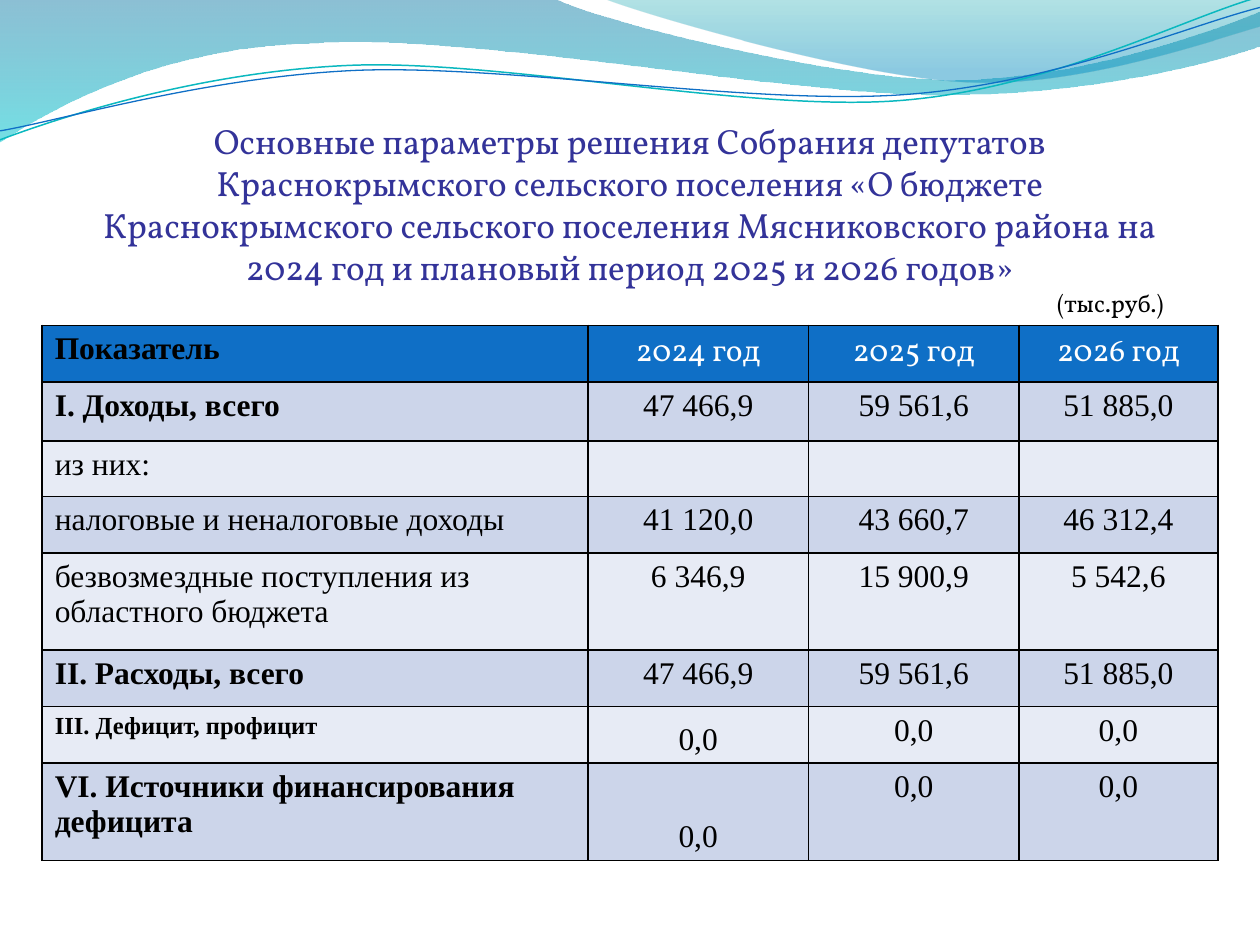
import math

import pptx
import pptx.dml.color
import pptx.enum.text
import pptx.oxml
import pptx.oxml.ns
import pptx.util

Cm, Pt = pptx.util.Cm, pptx.util.Pt
ALIGN = pptx.enum.text.PP_ALIGN
ANCHOR = pptx.enum.text.MSO_ANCHOR
NAMESPACE = pptx.oxml.ns.nsdecls("a")
SERIF, DISPLAY = "Times New Roman", "Vollkorn"
BLACK, WHITE, NAVY, BLUE = "000000", "FFFFFF", "333399", "0F6FC6"
BANDS = ("E7EBF5", "CCD5EA")
LINE_TILT = -2.7

# Outlines in cm: one point is a straight step, three are a Bezier step
WIDE_WAVE = [
    [(0, 0)], [(11.18, -0.03)], [(12.09, 0.43), (16.87, 1.6), (19.25, 1.6)],
    [(21.67, 1.6), (24.33, 0.66), (25.4, 0.23)], [(25.43, 0.91)],
    [(24.97, 1.12), (22.1, 1.93), (18.95, 1.91)],
    [(15.8, 1.91), (9.7, 0.71), (6.53, 0.86)],
    [(3.28, 0.91), (1.17, 2.11), (-0.03, 2.87)], [(0, 0)]]
RIGHT_WAVE = [
    [(12.17, -0.03)], [(12.93, 0.28), (17.32, 1.57), (19.53, 1.65)],
    [(21.74, 1.75), (24.41, 0.81), (25.4, 0.53)], [(25.4, 0)], [(12.17, -0.03)]]
TEAL_LINE = [
    [(0, 2.82)], [(1.22, 2.36), (4.01, 1.45), (7.04, 1.32)],
    [(10.03, 1.19), (15.06, 2.26), (18.11, 2.03)],
    [(21.16, 1.8), (23.83, 0.38), (25.35, -0.05)]]
BLUE_LINE = [
    [(0, 2.64)], [(1.19, 2.44), (4.17, 1.55), (7.19, 1.42)],
    [(10.24, 1.3), (15.16, 2.13), (18.21, 1.91)],
    [(21.23, 1.7), (23.9, 0.53), (25.4, 0.15)]]

TITLE = ("Основные параметры решения Собрания депутатов Краснокрымского сельского "
         "поселения «О бюджете Краснокрымского сельского поселения Мясниковского "
         "района на 2024 год и плановый период 2025 и 2026 годов»")
COLUMN_WIDTHS = (11, 4.45, 4.24, 4.01)
ROW_HEIGHTS = (1.14, 1.19, 1.12, 1.14, 1.96, 1.14, 1.14, 1.96)
BUDGET = [
    ("Показатель", "2024 год", "2025 год", "2026 год"),
    ("I. Доходы, всего", "47 466,9", "59 561,6", "51 885,0"),
    ("из них:", "", "", ""),
    ("налоговые и неналоговые доходы", "41 120,0", "43 660,7", "46 312,4"),
    ("безвозмездные поступления из областного бюджета", "6 346,9", "15 900,9", "5 542,6"),
    ("II. Расходы, всего", "47 466,9", "59 561,6", "51 885,0"),
    ("III. Дефицит, профицит", "0,0", "0,0", "0,0"),
    ("VI. Источники финансирования дефицита", "0,0", "0,0", "0,0")]
BOLD_ROWS = (0, 1, 5, 6, 7)
DEFICIT_ROW = 6


def color(value):
    return pptx.dml.color.RGBColor.from_string(value)


def to_local(point, box, tilt):
    """Place a slide point in the frame of a box tilted about its centre."""
    left, top, width, height = box
    dx, dy = point[0] - left - width / 2, point[1] - top - height / 2
    cos, sin = math.cos(math.radians(-tilt)), math.sin(math.radians(-tilt))
    return (Cm(dx * cos - dy * sin + width / 2), Cm(dx * sin + dy * cos + height / 2))


def add_outline(slide, steps, box, tilt=0):
    local = [[to_local(point, box, tilt) for point in step] for step in steps]
    builder = slide.shapes.build_freeform(*local[0][0])
    builder.add_line_segments([step[-1] for step in local[1:]], close=steps[0] == steps[-1])
    outline = builder.convert_to_shape()
    outline.left, outline.top, outline.width, outline.height = map(Cm, box)
    outline.rotation = tilt
    outline.shadow.inherit = False
    # Rewrite the steps in box coordinates, with true curves
    path_node = outline._element.find(".//" + pptx.oxml.ns.qn("a:path"))
    path_node.set("w", str(outline.width))
    path_node.set("h", str(outline.height))
    for index, step in enumerate(local):
        tag = "moveTo" if index == 0 else "lnTo" if len(step) == 1 else "cubicBezTo"
        points = "".join(f'<a:pt x="{int(x)}" y="{int(y)}"/>' for x, y in step)
        path_node.replace(path_node[index], pptx.oxml.parse_xml(
            f"<a:{tag} {NAMESPACE}>{points}</a:{tag}>"))
    return outline


def add_wave(slide, steps, box, stops):
    wave = add_outline(slide, steps, box)
    wave.line.fill.background()
    wave.fill.gradient()
    wave.fill.gradient_angle = 270
    for stop, (position, value, _) in zip(wave.fill.gradient_stops, stops):
        stop.position = position
        stop.color.rgb = color(value)
    # Opacity of each gradient stop
    rgb_nodes = wave._element.spPr.findall(".//" + pptx.oxml.ns.qn("a:srgbClr"))
    for node, (_, _, opacity) in zip(rgb_nodes, stops):
        node.append(pptx.oxml.parse_xml(f'<a:alpha {NAMESPACE} val="{opacity * 1000}"/>'))


def add_wave_line(slide, steps, box, value, width):
    wave_line = add_outline(slide, steps, box, LINE_TILT)
    wave_line.fill.background()
    wave_line.line.color.rgb = color(value)
    wave_line.line.width = Pt(width)


def add_run(paragraph, text, size, font, value, bold=False, align=ALIGN.CENTER):
    paragraph.alignment = align
    run = paragraph.add_run()
    run.text = text
    run.font.size = Pt(size)
    run.font.name = font
    run.font.bold = bold
    run.font.color.rgb = color(value)


def add_title(slide):
    title = slide.shapes.add_textbox(Cm(1.69), Cm(2.29), Cm(22.02), Cm(4.27))
    frame = title.text_frame
    frame.word_wrap = True
    frame.auto_size = pptx.enum.text.MSO_AUTO_SIZE.SHAPE_TO_FIT_TEXT
    add_run(frame.paragraphs[0], TITLE, 20, DISPLAY, NAVY)
    add_run(frame.add_paragraph(), "(тыс.руб.)", 14, DISPLAY, BLACK, align=ALIGN.RIGHT)


def add_borders(cell):
    properties = cell._tc.get_or_add_tcPr()
    for i, side in enumerate("LRTB"):
        properties.insert(i, pptx.oxml.parse_xml(
            f'<a:ln{side} {NAMESPACE} w="{int(Pt(1))}"><a:solidFill>'
            f'<a:srgbClr val="{BLACK}"/></a:solidFill></a:ln{side}>'))


def fill_cell(cell, row, column, text):
    cell.fill.solid()
    cell.fill.fore_color.rgb = color(BLUE if row == 0 else BANDS[row % 2])
    add_borders(cell)
    if not text:
        return
    paragraph = cell.text_frame.paragraphs[0]
    if column == 0:
        size = 14 if row == DEFICIT_ROW else 18
        add_run(paragraph, text, size, SERIF, BLACK, row in BOLD_ROWS, ALIGN.LEFT)
    elif row == 0:
        add_run(paragraph, text, 18, DISPLAY, WHITE)
    else:
        add_run(paragraph, text, 18, SERIF, BLACK)
    if column == 1 and row >= DEFICIT_ROW:
        cell.vertical_anchor = ANCHOR.BOTTOM


def add_budget_table(slide):
    budget = slide.shapes.add_table(
        len(BUDGET), len(COLUMN_WIDTHS), Cm(0.85), Cm(6.56),
        Cm(sum(COLUMN_WIDTHS)), Cm(sum(ROW_HEIGHTS))).table
    for column, width in zip(budget.columns, COLUMN_WIDTHS):
        column.width = Cm(width)
    for row, height in zip(budget.rows, ROW_HEIGHTS):
        row.height = Cm(height)
    for r, texts in enumerate(BUDGET):
        for c, text in enumerate(texts):
            fill_cell(budget.cell(r, c), r, c, text)


def main():
    presentation = pptx.Presentation()
    presentation.slide_width, presentation.slide_height = Cm(25.4), Cm(19.05)
    slide = presentation.slides.add_slide(presentation.slide_layouts[6])

    # Wave decoration along the top
    add_wave(slide, WIDE_WAVE, (-0.03, -0.03, 25.46, 2.9),
             [(0, "0074A1", 45), (1, "00C6CF", 55)])
    add_wave(slide, RIGHT_WAVE, (12.17, -0.03, 13.23, 1.78),
             [(0, "00A1A9", 30), (0.8, "008BBF", 45)])
    add_wave_line(slide, TEAL_LINE, (-0.05, 0.56, 25.45, 1.8), "0AB8BF", 0.85)
    add_wave_line(slide, BLUE_LINE, (-0.05, 0.76, 25.48, 1.47), BLUE, 0.75)

    # Heading and budget figures
    add_title(slide)
    add_budget_table(slide)
    presentation.save("out.pptx")


if __name__ == "__main__":
    main()
